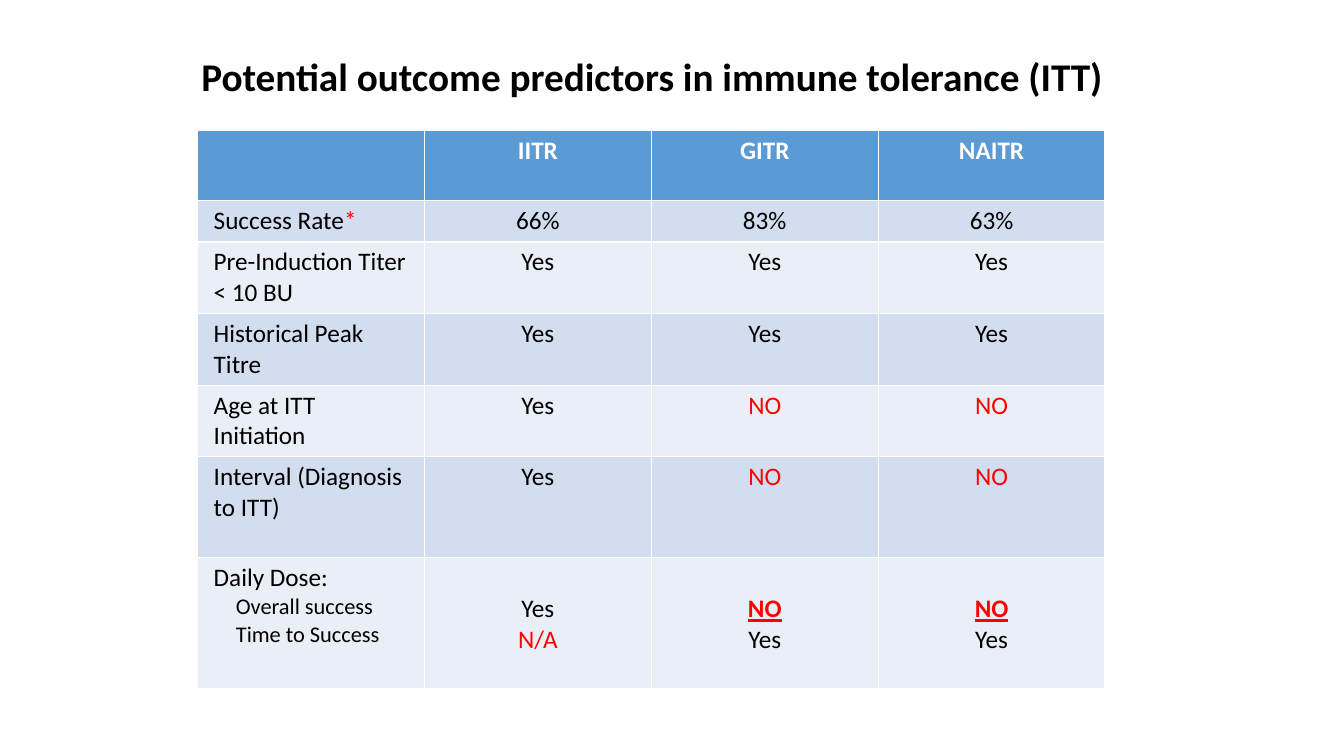
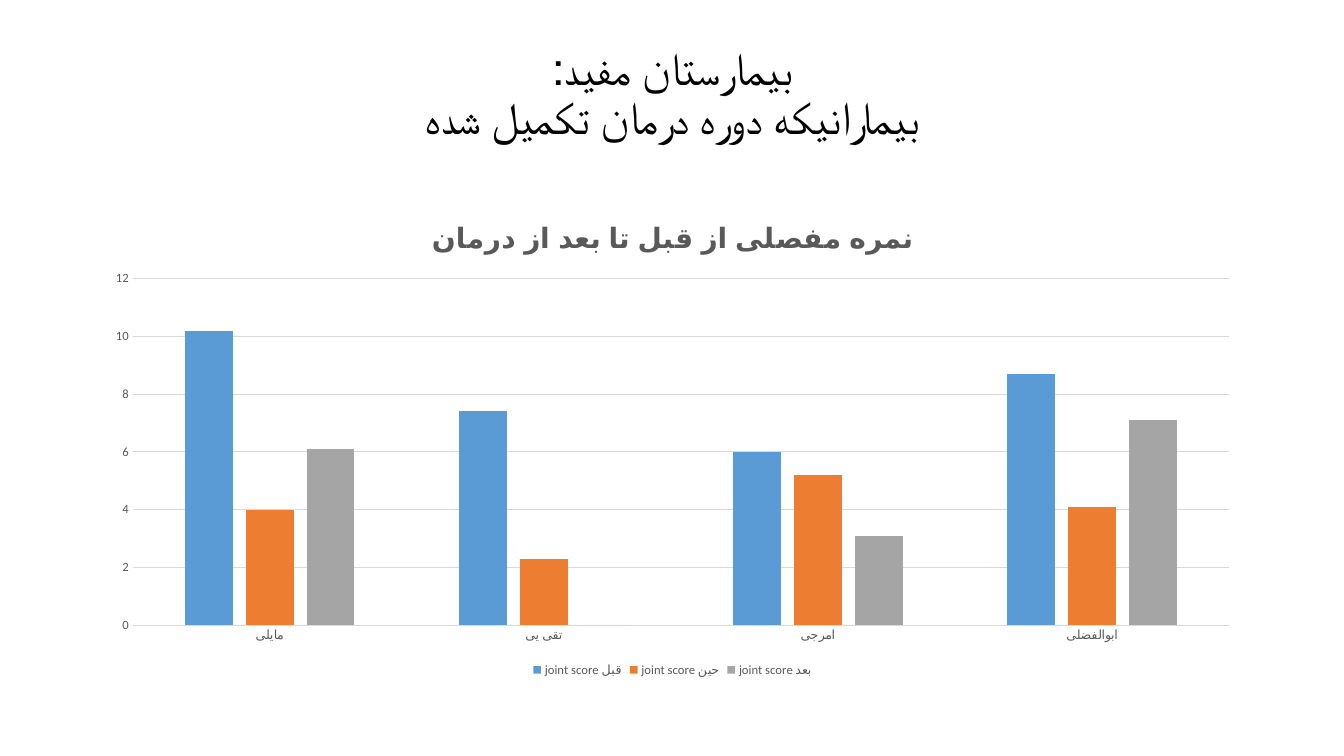
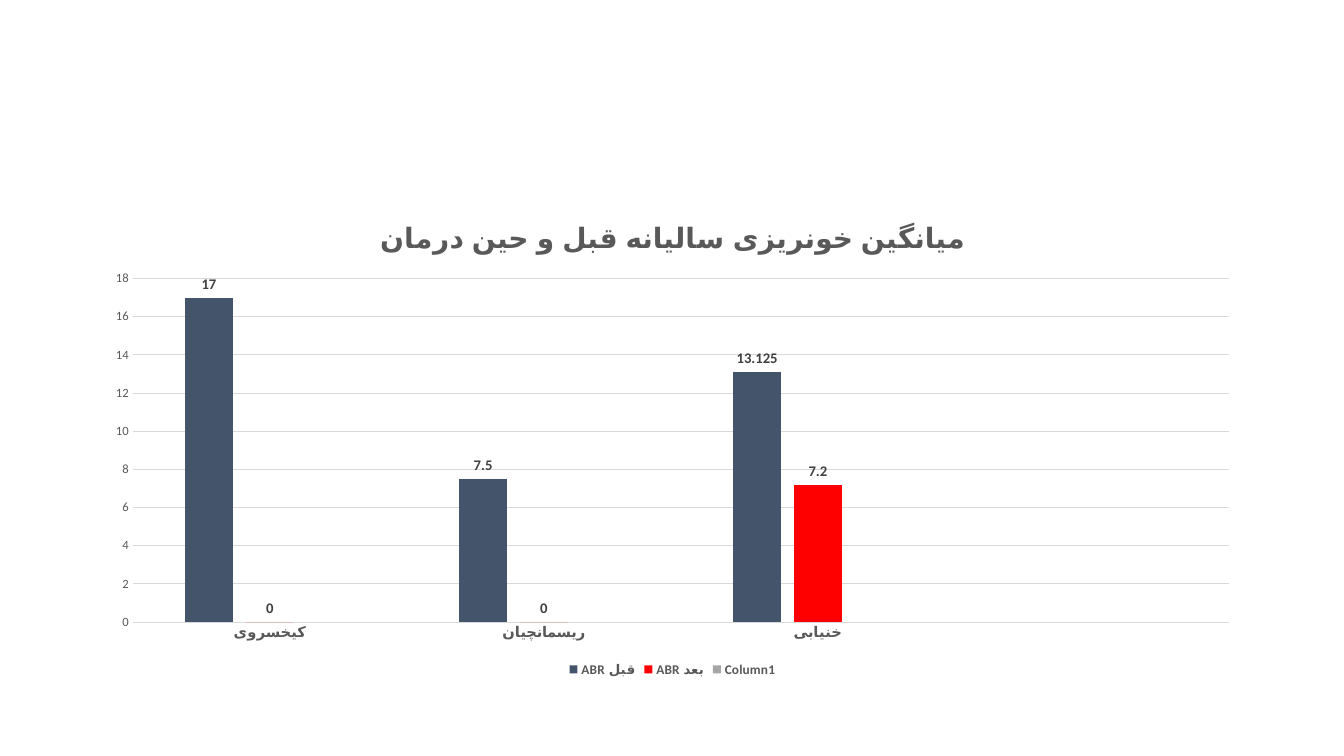
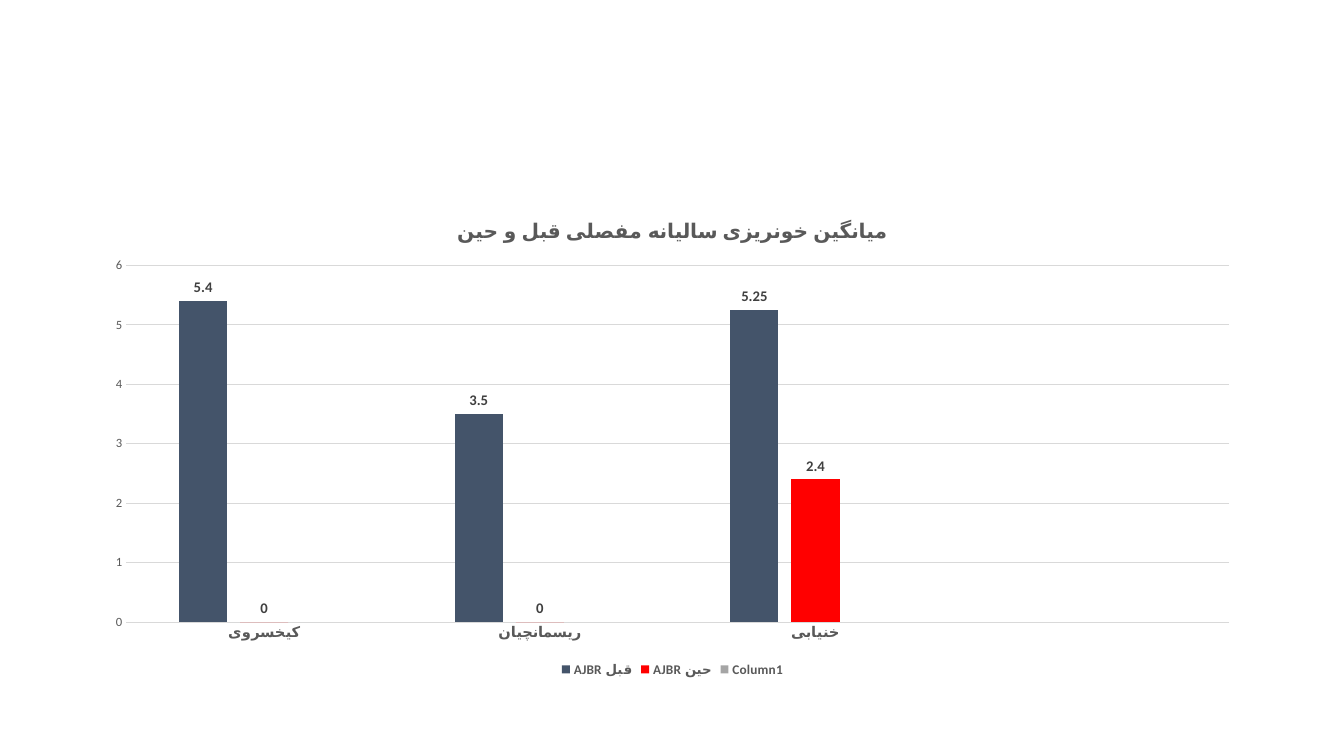
from pptx import Presentation
from pptx.chart.data import CategoryChartData
from pptx.dml.color import RGBColor
from pptx.enum.chart import (XL_CHART_TYPE, XL_LABEL_POSITION,
                             XL_LEGEND_POSITION, XL_TICK_MARK)
from pptx.enum.text import MSO_ANCHOR, PP_ALIGN
from pptx.util import Inches, Pt

COLUMNS = XL_CHART_TYPE.COLUMN_CLUSTERED
OUTSIDE = XL_LABEL_POSITION.OUTSIDE_END
BOTTOM = XL_LEGEND_POSITION.BOTTOM
NO_TICK = XL_TICK_MARK.NONE
MIDDLE = MSO_ANCHOR.MIDDLE
LEFT, CENTER = PP_ALIGN.LEFT, PP_ALIGN.CENTER

BLACK = RGBColor(0x00, 0x00, 0x00)
WHITE = RGBColor(0xFF, 0xFF, 0xFF)
RED = RGBColor(0xFF, 0x00, 0x00)
BLUE = RGBColor(0x5B, 0x9B, 0xD5)
ORANGE = RGBColor(0xED, 0x7D, 0x31)
GRAY = RGBColor(0xA5, 0xA5, 0xA5)
NAVY = RGBColor(0x44, 0x54, 0x6A)
DARK = RGBColor(0x40, 0x40, 0x40)
TEXT = RGBColor(0x59, 0x59, 0x59)
GRID = RGBColor(0xD9, 0xD9, 0xD9)
BANDS = RGBColor(0xD2, 0xDE, 0xEF), RGBColor(0xEA, 0xEF, 0xF7)

FONT = "Calibri"
CHART_BOX = (0.92, 2, 11.5, 4.76)
TITLE_ONLY, BLANK = 5, 6

ROWS = [
    ("", "IITR", "GITR", "NAITR"),
    ("Success Rate", "66%", "83%", "63%"),
    ("Pre-Induction Titer < 10 BU", "Yes", "Yes", "Yes"),
    ("Historical Peak Titre", "Yes", "Yes", "Yes"),
    ("Age at ITT Initiation", "Yes", "NO", "NO"),
    ("Interval (Diagnosis to ITT)", "Yes", "NO", "NO"),
    ("Daily Dose:\nOverall success\nTime to Success",
     "Yes\nN/A", "NO\nYes", "NO\nYes"),
]
HEIGHTS = (0.7, 0.41, 0.7, 0.7, 0.7, 1, 1.3)
LINE = 0.31

PATIENTS = ["کیخسروی", "ریسمانچیان", "خنیابی", ""]
EMPTY = [None] * 4


def style(font, size, color, bold=False):
    font.name = FONT
    font.size = Pt(size)
    font.bold = bold
    font.color.rgb = color


def place(shape, box):
    shape.left, shape.top, shape.width, shape.height = map(Inches, box)


def add_title(slide, box, text, size, bold=False, rtl=False):
    title = slide.shapes.title
    place(title, box)
    frame = title.text_frame
    frame.text = text
    frame.word_wrap = True
    frame.vertical_anchor = MIDDLE
    para = frame.paragraphs[0]
    para.alignment = CENTER
    para.line_spacing = 0.9
    if rtl:
        para._p.get_or_add_pPr().set("rtl", "1")
    for run in para.runs:
        style(run.font, size, BLACK, bold)
    return frame


def fill_cell(cell, text, row, col):
    cell.margin_left = cell.margin_right = Inches(0.16)
    cell.margin_top = cell.margin_bottom = Inches(0.05)
    cell.fill.solid()
    cell.fill.fore_color.rgb = BANDS[(row - 1) % 2] if row else BLUE
    cell.text = text
    for num, para in enumerate(cell.text_frame.paragraphs):
        para.alignment = CENTER if col else LEFT
        sub = col == 0 and num > 0
        if sub:
            para._p.get_or_add_pPr().set("marL", str(Inches(0.22)))
        color = RED if para.text in ("NO", "N/A") else BLACK
        for run in para.runs:
            style(run.font, 16 if sub else 18, color if row else WHITE, not row)


def add_outcomes(slide, left, top, width):
    """Table of predictors; its height follows from the rows."""
    shape = slide.shapes.add_table(
        len(ROWS), len(ROWS[0]), Inches(left), Inches(top),
        Inches(width), Inches(sum(HEIGHTS)))
    table = shape.table
    for row, (texts, height) in enumerate(zip(ROWS, HEIGHTS)):
        table.rows[row].height = Inches(height)
        for col, text in enumerate(texts):
            fill_cell(table.cell(row, col), text, row, col)

    star = table.cell(1, 0).text_frame.paragraphs[0].add_run()
    star.text = "*"
    style(star.font, 18, RED)

    dose = len(ROWS) - 1
    for col in range(1, len(ROWS[0])):
        cell = table.cell(dose, col)
        cell.margin_top = Inches(0.05 + LINE)
        run = cell.text_frame.paragraphs[0].runs[0]
        run.font.bold = run.font.underline = run.text == "NO"


def add_columns(slide, box, title, size, cats, series, strong=False):
    """Clustered columns; strong gives bold text and value labels."""
    data = CategoryChartData()
    data.categories = cats
    for name, vals, _ in series:
        data.add_series(name, vals)
    chart = slide.shapes.add_chart(COLUMNS, *map(Inches, box), data).chart
    style(chart.font, 10, BLACK)

    chart.has_title = True
    frame = chart.chart_title.text_frame
    frame.text = title
    style(frame.paragraphs[0].runs[0].font, size, TEXT, True)
    chart.chart_title.include_in_layout = False

    chart.has_legend = True
    chart.legend.position = BOTTOM
    chart.legend.include_in_layout = False
    style(chart.legend.font, 9.5 if strong else 9, TEXT, strong)

    cat, val = chart.category_axis, chart.value_axis
    for axis in (cat, val):
        axis.major_tick_mark = axis.minor_tick_mark = NO_TICK
    style(cat.tick_labels.font, 10.5 if strong else 9, TEXT, strong)
    style(val.tick_labels.font, 9, TEXT)
    val.format.line.fill.background()
    val.has_major_gridlines = True
    for line in (cat.format.line, val.major_gridlines.format.line):
        line.color.rgb = GRID
        line.width = Pt(0.75)

    plot = chart.plots[0]
    plot.gap_width, plot.overlap = 219, -27
    plot.vary_by_categories = False
    for bars, (_, vals, color) in zip(plot.series, series):
        bars.format.fill.solid()
        bars.format.fill.fore_color.rgb = color
        bars.invert_if_negative = False
        if strong and vals != EMPTY:
            labels = bars.data_labels
            labels.show_value = True
            labels.position = OUTSIDE
            style(labels.font, 10.5, DARK, True)


def main():
    prs = Presentation()
    prs.slide_width, prs.slide_height = Inches(13.33), Inches(7.5)

    def new(layout):
        return prs.slides.add_slide(prs.slide_layouts[layout])

    slide = new(TITLE_ONLY)
    frame = add_title(slide, (0, 0.21, 12.93, 1.45),
                      "Potential outcome predictors in immune tolerance (ITT)",
                      28, bold=True)
    frame.margin_bottom = Inches(0.36)
    add_outcomes(slide, 1.96, 1.29, 9)

    slide = new(TITLE_ONLY)
    add_title(slide, (0.92, 0.4, 11.5, 1.09),
              "بیمارستان مفید:\vبیمارانیکه دوره درمان تکمیل شده",
              32.4, rtl=True)
    add_columns(slide, CHART_BOX, "نمره مفصلی از قبل تا بعد از درمان", 20,
                ["مایلی", "تقی یی", "امرجی", "ابوالفضلی"],
                [("joint score قبل", [10.2, 7.4, 6, 8.7], BLUE),
                 ("joint score حین", [4, 2.3, 5.2, 4.1], ORANGE),
                 ("joint score بعد", [6.1, 0, 3.1, 7.1], GRAY)])

    add_columns(new(BLANK), CHART_BOX,
                "میانگین خونریزی سالیانه قبل و حین درمان", 20, PATIENTS,
                [("ABR قبل", [17, 7.5, 13.125, None], NAVY),
                 ("ABR بعد", [0, 0, 7.2, None], RED),
                 ("Column1", EMPTY, GRAY)], strong=True)

    add_columns(new(BLANK), CHART_BOX,
                "میانگین خونریزی سالیانه مفصلی قبل و حین", 14.4, PATIENTS,
                [("AJBR قبل", [5.4, 3.5, 5.25, None], NAVY),
                 ("AJBR حین", [0, 0, 2.4, None], RED),
                 ("Column1", EMPTY, GRAY)], strong=True)

    prs.save("out.pptx")


if __name__ == "__main__":
    main()
